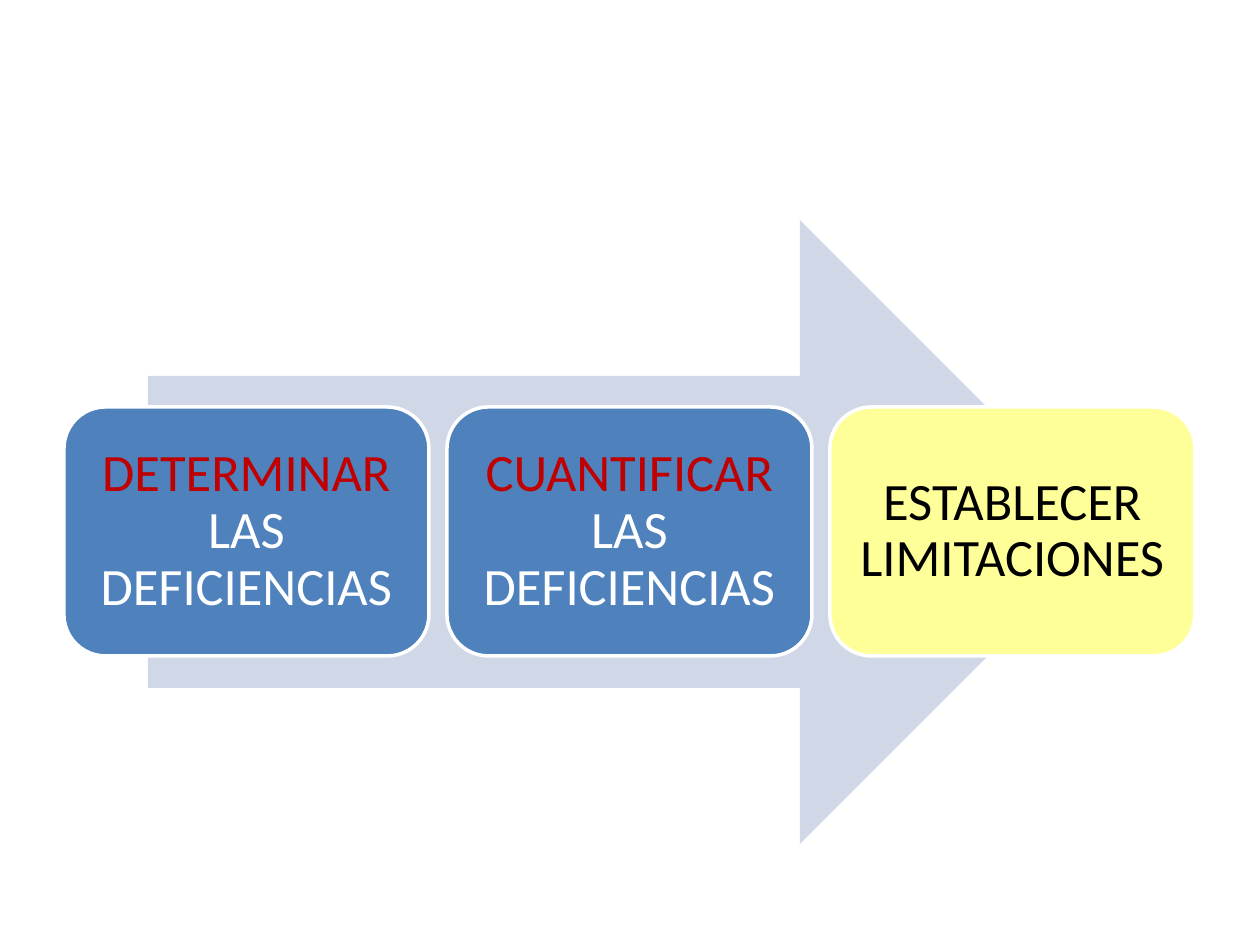
from pptx import Presentation
from pptx.dml.color import RGBColor
from pptx.enum.shapes import MSO_SHAPE as Shape
from pptx.enum.text import MSO_ANCHOR as Anchor, PP_ALIGN as Align
from pptx.util import Emu, Pt

EMU_PER_PX = 914400 // 126
BLANK_LAYOUT = 6

# Process steps: fill and coloured text spans
STEPS = [
    ("4F81BD", [("DETERMINAR ", "C00000"), ("LAS DEFICIENCIAS", "FFFFFF")]),
    ("4F81BD", [("CUANTIFICAR ", "C00000"), ("LAS DEFICIENCIAS", "FFFFFF")]),
    ("FFFF99", [("ESTABLECER LIMITACIONES", "000000")]),
]
STEP_LEFT, STEP_TOP, STEP_WIDTH, STEP_HEIGHT = 64, 407, 365, 249
STEP_GAP = 18
INSET = 15


def px(length):
    return Emu(length * EMU_PER_PX)


def colour(hex_code):
    return RGBColor.from_string(hex_code)


def add_filled_shape(page, kind, left, top, width, height, fill):
    shape = page.shapes.add_shape(kind, px(left), px(top), px(width), px(height))
    shape.shadow.inherit = False
    shape.fill.solid()
    shape.fill.fore_color.rgb = colour(fill)
    shape.line.fill.background()
    return shape


def add_step(page, left, fill, spans):
    box = add_filled_shape(page, Shape.ROUNDED_RECTANGLE, left, STEP_TOP,
                           STEP_WIDTH, STEP_HEIGHT, fill)
    box.line.color.rgb = colour("FFFFFF")
    box.line.width = Pt(2)

    frame = box.text_frame
    frame.word_wrap = True
    frame.vertical_anchor = Anchor.MIDDLE
    frame.margin_left = frame.margin_right = px(INSET)
    frame.margin_top = frame.margin_bottom = px(INSET)

    para = frame.paragraphs[0]
    para.alignment = Align.CENTER
    para.line_spacing = 0.9
    for text, text_colour in spans:
        span = para.add_run()
        span.text = text
        span.font.name = "Calibri"
        span.font.size = Pt(30)
        span.font.color.rgb = colour(text_colour)


def main():
    deck = Presentation()
    deck.slide_width, deck.slide_height = px(1260), px(945)
    page = deck.slides.add_slide(deck.slide_layouts[BLANK_LAYOUT])

    # Background arrow
    add_filled_shape(page, Shape.RIGHT_ARROW, 148, 220, 964, 624, "D0D8E8")

    # Row of steps
    for index, (fill, spans) in enumerate(STEPS):
        left = STEP_LEFT + index * (STEP_WIDTH + STEP_GAP)
        add_step(page, left, fill, spans)

    deck.save("out.pptx")


if __name__ == "__main__":
    main()
